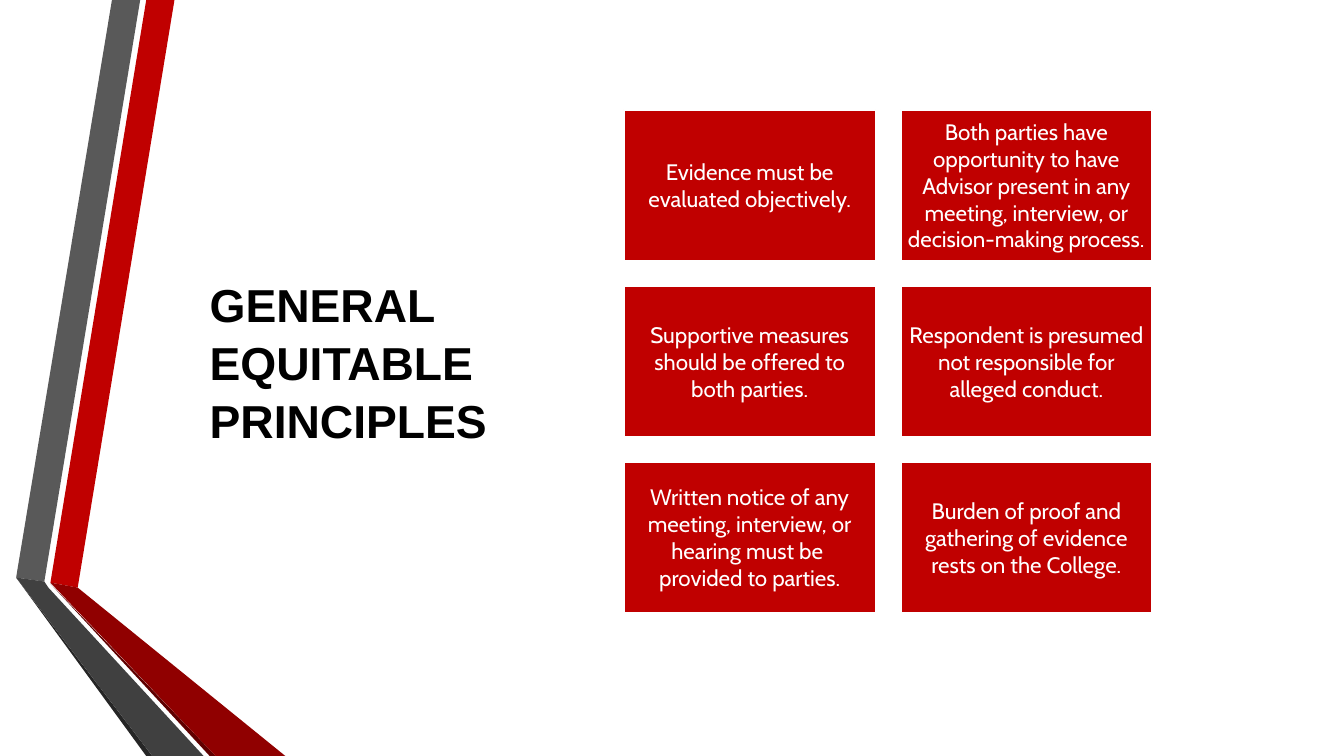
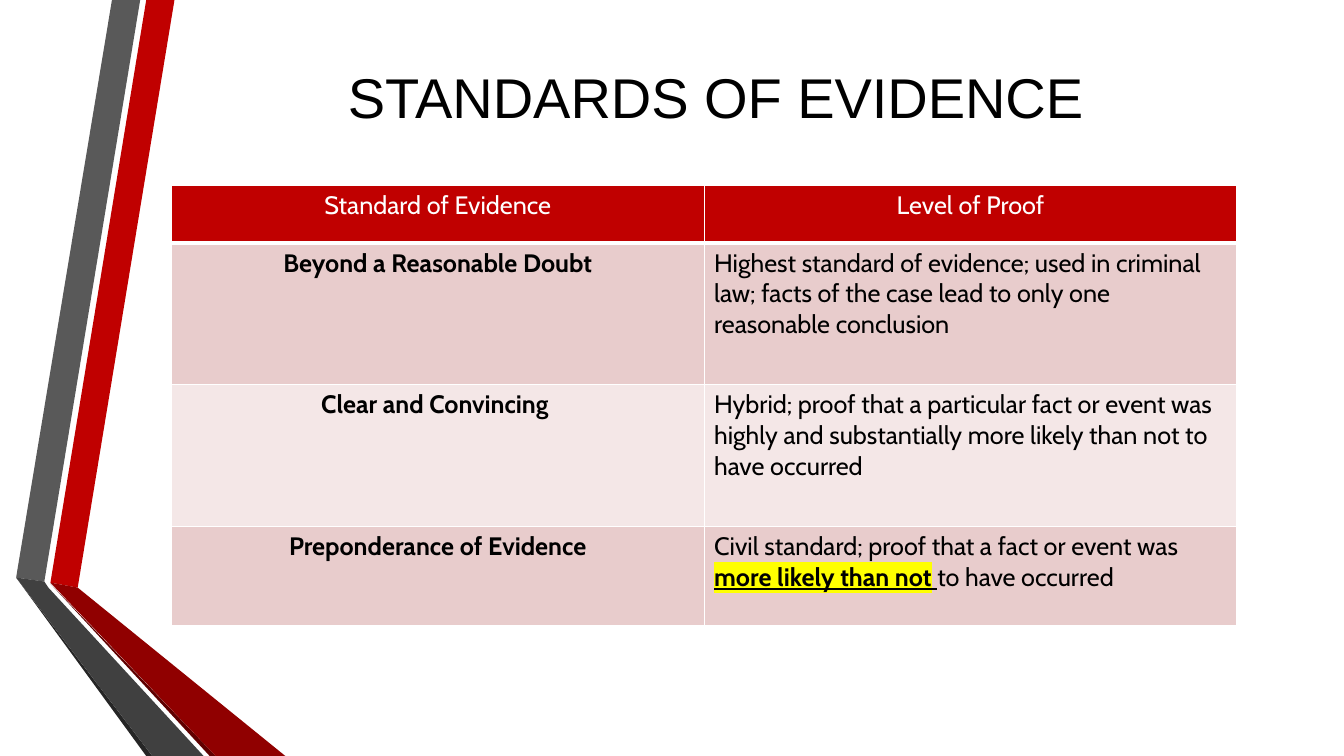
"""Build two slides on equitable principles and standards of evidence."""
from collections import namedtuple

from lxml.etree import SubElement
from pptx import Presentation
from pptx.dml.color import RGBColor
from pptx.enum.shapes import MSO_SHAPE as Preset
from pptx.enum.text import MSO_ANCHOR as Anchor, MSO_AUTO_SIZE as AutoSize, PP_ALIGN as Align
from pptx.oxml.ns import qn
from pptx.util import Inches, Pt

COLORS = {
    "white": "FFFFFF", "black": "000000", "red": "C00000", "dark_red": "900000",
    "deep_red": "600000", "gray": "595959", "dark_gray": "404040",
    "deep_gray": "262626", "rose": "E8CCCC", "pale_rose": "F4E7E7",
    "marker": "FFFF00",
}
HEADING, BODY = "Arial", "Cabin"
WIDTH, HEIGHT = Inches(13.33), Inches(7.5)

Box = namedtuple("Box", "left top width height")

BANDS = [
    ("red", [(3.75, 77.07), (5.78, 77.73), (12.98, 0), (10.88, 0)]),
    ("gray", [(10.43, 0), (8.33, 0), (1.2, 76.4), (3.3, 76.93)]),
    ("deep_gray", [(1.2, 76.4), (10.88, 100), (11.33, 100)]),
    ("deep_red", [(3.75, 77.2), (15.6, 100), (16.05, 100)]),
    ("dark_red", [(3.75, 77.07), (16.05, 100), (21.23, 100), (5.78, 77.73)]),
    ("dark_gray", [(15.15, 100), (3.6, 77.73), (3.3, 76.93), (1.2, 76.4), (11.33, 100)]),
]
PRINCIPLES = [
    "Evidence must be evaluated objectively.",
    "Both parties have opportunity to have Advisor present in any meeting, "
    "interview, or decision-making process.",
    "Supportive measures should be offered to both parties.",
    "Respondent is presumed not responsible for alleged conduct.",
    "Written notice of any meeting, interview, or hearing must be \nprovided to parties.",
    "Burden of proof and gathering of evidence rests on the College.",
]
STANDARDS = [
    ("Standard of Evidence", "Level of Proof"),
    ("Beyond a Reasonable Doubt",
     "Highest standard of evidence; used in criminal law; facts of the case lead "
     "to only one reasonable conclusion"),
    ("Clear and Convincing ",
     "Hybrid; proof that a particular fact or event was highly and substantially "
     "more likely than not to have occurred"),
    ("Preponderance of Evidence",
     [("Civil standard; proof that a fact or event was ", {}),
      ("more likely than not", {"bold": True, "underline": True, "marker": "marker"}),
      (" ", {"bold": True, "underline": True}),
      ("to have occurred", {})]),
]
ROW_WEIGHTS = (0.57, 1.41, 1.41, 0.99)


def rgb(name):
    """Return the named colour."""
    return RGBColor.from_string(COLORS[name])


def place(left, top, width, height):
    """Turn percentages of the slide into a box of lengths."""
    return Box(*(round(share * side / 100) for share, side in
                 zip((left, top, width, height), (WIDTH, HEIGHT) * 2)))


def write(frame, text, size=18, font=BODY, color="black", bold=False,
          align=Align.LEFT, spacing=None):
    """Fill a text frame with lines of text, or with one line of formatted runs."""
    lines = [[(line, {})] for line in text.split("\n")] if isinstance(text, str) else [text]
    for index, runs in enumerate(lines):
        paragraph = frame.add_paragraph() if index else frame.paragraphs[0]
        paragraph.alignment = align
        if spacing:
            paragraph.line_spacing = spacing
        for words, style in runs:
            run = paragraph.add_run()
            run.text = words
            run.font.size, run.font.name = Pt(size), font
            run.font.bold = style.get("bold", bold)
            run.font.underline = style.get("underline", False)
            run.font.color.rgb = rgb(color)
            if "marker" in style:
                properties = run.font.fill._xPr
                highlight = SubElement(properties, qn("a:highlight"))
                SubElement(highlight, qn("a:srgbClr"), val=COLORS[style["marker"]])
                properties.find(qn("a:solidFill")).addnext(highlight)


def set_title(slide, box, text, anchor, **style):
    """Move the title placeholder to the box and write the title."""
    title = slide.shapes.title
    title.left, title.top, title.width, title.height = box
    frame = title.text_frame
    frame.auto_size, frame.word_wrap = AutoSize.NONE, True
    frame.vertical_anchor = anchor
    write(frame, text, font=HEADING, **style)


def draw_bands(slide):
    """Draw the folded ribbons down the left edge."""
    for color, corners in BANDS:
        points = [place(x, y, 0, 0)[:2] for x, y in corners]
        builder = slide.shapes.build_freeform(*points[0])
        builder.add_line_segments(points[1:], close=True)
        ribbon = builder.convert_to_shape()
        ribbon.shadow.inherit = False
        ribbon.fill.solid()
        ribbon.fill.fore_color.rgb = rgb(color)
        ribbon.line.fill.background()


def draw_cards(slide, box, texts, columns=2, gap_share=0.1):
    """Lay out texts as a grid of red cards with equal gaps."""
    rows = -(-len(texts) // columns)
    width = box.width / (columns + gap_share * (columns - 1))
    gap = width * gap_share
    height = (box.height - gap * (rows - 1)) / rows
    for index, text in enumerate(texts):
        row, column = divmod(index, columns)
        card = slide.shapes.add_shape(
            Preset.RECTANGLE, round(box.left + column * (width + gap)),
            round(box.top + row * (height + gap)), round(width), round(height))
        card.shadow.inherit = False
        card.fill.solid()
        card.fill.fore_color.rgb = rgb("red")
        card.line.color.rgb, card.line.width = rgb("white"), Pt(1.25)
        frame = card.text_frame
        frame.word_wrap, frame.vertical_anchor = True, Anchor.MIDDLE
        frame.margin_left = frame.margin_right = Inches(0.06)
        frame.margin_top = frame.margin_bottom = Inches(0.07)
        write(frame, text, size=16, color="white", align=Align.CENTER)


def set_borders(cell, bottom):
    """Give a cell white borders, with its own weight at the bottom."""
    properties = cell._tc.get_or_add_tcPr()
    for index, (side, points) in enumerate(
            (("lnL", 1), ("lnR", 1), ("lnT", 1), ("lnB", bottom))):
        border = SubElement(properties, qn(f"a:{side}"), w=str(Pt(points)))
        fill = SubElement(border, qn("a:solidFill"))
        SubElement(fill, qn("a:srgbClr"), val=COLORS["white"])
        properties.insert(index, border)


def draw_standards(slide, box, rows):
    """Draw the table of standards with a red header and banded rows."""
    table = slide.shapes.add_table(len(rows), len(rows[0]), *box).table
    table.first_row = table.horz_banding = False
    for row, texts in enumerate(rows):
        table.rows[row].height = round(box.height * ROW_WEIGHTS[row] / sum(ROW_WEIGHTS))
        header = row == 0
        fill = "red" if header else ("pale_rose", "rose")[row % 2]
        for column, text in enumerate(texts):
            cell = table.cell(row, column)
            cell.fill.solid()
            cell.fill.fore_color.rgb = rgb(fill)
            set_borders(cell, bottom=3 if header else 1)
            label = column == 0
            write(cell.text_frame, text, color="white" if header else "black",
                  bold=label and not header,
                  align=Align.CENTER if header or label else Align.LEFT)


def add_slide(deck):
    """Add a title-only slide with the ribbons."""
    slide = deck.slides.add_slide(deck.slide_layouts[5])
    draw_bands(slide)
    return slide


def build_principles(deck):
    """Build the slide of principles."""
    slide = add_slide(deck)
    set_title(slide, place(14.85, 35.47, 24.22, 28.93), "GENERAL EQUITABLE PRINCIPLES",
              Anchor.TOP, size=33, bold=True, spacing=1.05)
    draw_cards(slide, place(46.43, 14.53, 39.3, 66.53), PRINCIPLES)


def build_standards(deck):
    """Build the slide of evidence standards."""
    slide = add_slide(deck)
    set_title(slide, place(12.15, 5.6, 82.2, 14.27), "STANDARDS OF EVIDENCE",
              Anchor.MIDDLE, size=40, align=Align.CENTER)
    draw_standards(slide, place(12.75, 24.53, 79.28, 58.27), STANDARDS)


def main():
    """Build and save the deck."""
    deck = Presentation()
    deck.slide_width, deck.slide_height = WIDTH, HEIGHT
    build_principles(deck)
    build_standards(deck)
    deck.save("out.pptx")


if __name__ == "__main__":
    main()
